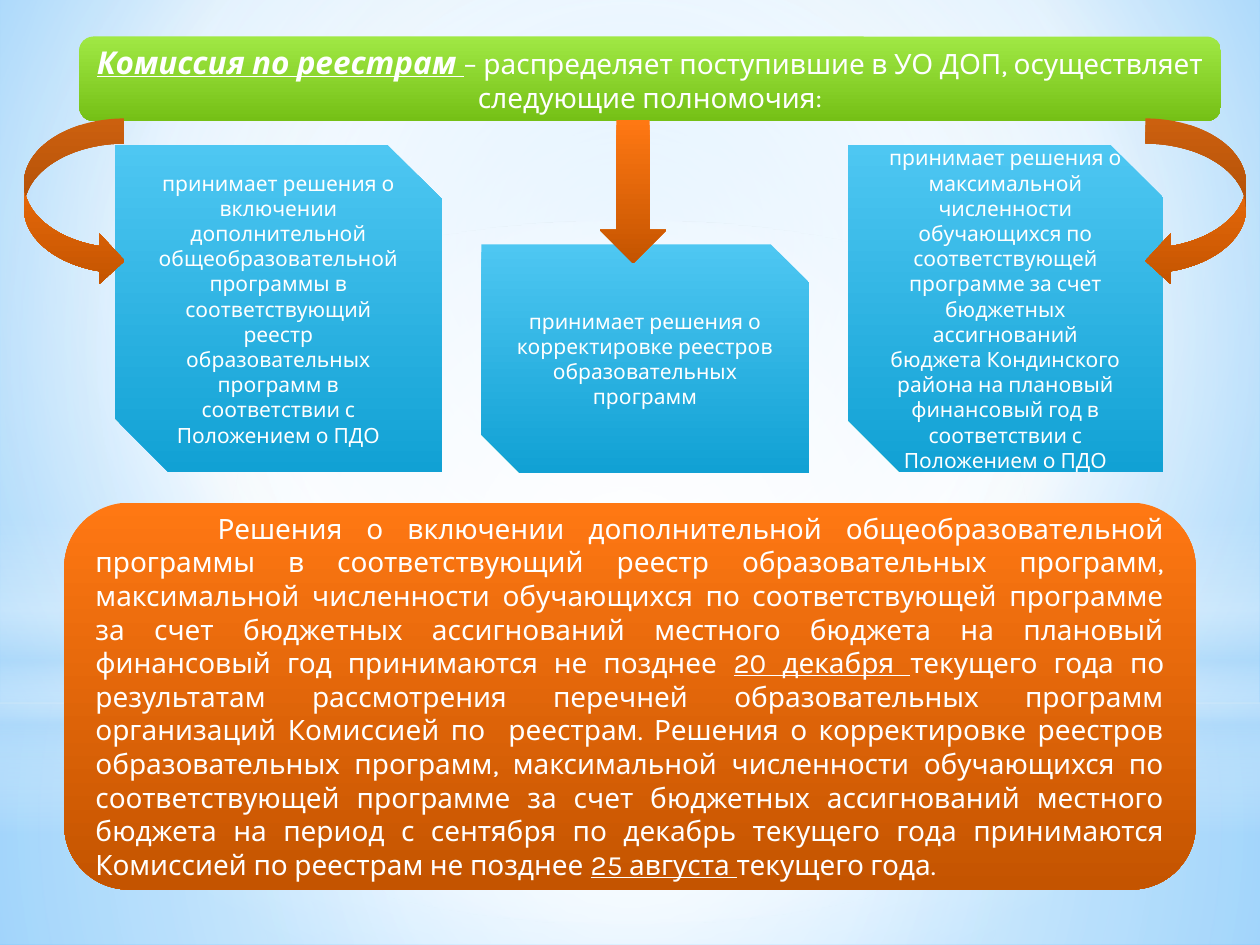
import pptx
import pptx.dml.color
import pptx.enum.shapes
import pptx.enum.text
import pptx.oxml.ns
import pptx.util
from lxml import etree

SHAPES = pptx.enum.shapes.MSO_SHAPE
ALIGN = pptx.enum.text.PP_ALIGN
qn = pptx.oxml.ns.qn

COLORS = {
    "white": "FFFFFF",
    "haze": "B4DCFA",
    "sky": "9ED5FF",
    "deep_sky": "5BB9FF",
    "green": "A0E844",
    "dark_green": "75C016",
    "blue": "4EC7F2",
    "dark_blue": "11A1D4",
    "orange": "FF7813",
    "dark_orange": "C45400",
}

# Gradient stops: position in percent, colour, opacity in percent
GREEN = [(0, "green", 100), (100, "dark_green", 100)]
BLUE = [(0, "blue", 100), (100, "dark_blue", 100)]
ORANGE = [(0, "orange", 100), (100, "dark_orange", 100)]
CENTER = (50, 50, 50, 50)


def gradient(stops, focus=None):
    """Vertical gradient, or a circular one around the focus rectangle."""
    fill = etree.Element(qn("a:gradFill"), rotWithShape="1")
    stop_list = etree.SubElement(fill, qn("a:gsLst"))
    for position, color, opacity in stops:
        stop = etree.SubElement(stop_list, qn("a:gs"), pos=str(position * 1000))
        value = etree.SubElement(stop, qn("a:srgbClr"), val=COLORS[color])
        if opacity < 100:
            etree.SubElement(value, qn("a:alpha"), val=str(opacity * 1000))
    if focus:
        circle = etree.SubElement(fill, qn("a:path"), {"path": "circle"})
        sides = {side: str(share * 1000) for side, share in zip("ltrb", focus)}
        etree.SubElement(circle, qn("a:fillToRect"), sides)
    else:
        etree.SubElement(fill, qn("a:lin"), ang="5400000", scaled="0")
    return fill


class SlideBuilder:
    """Style and current slide; lengths are cells of a 100 by 75 grid."""

    FONT = "Karla"
    COLUMNS = 100

    def __init__(self, presentation):
        self.cell = presentation.slide_width / self.COLUMNS
        self.slide = presentation.slides.add_slide(presentation.slide_layouts[6])

    def length(self, cells):
        return pptx.util.Emu(round(cells * self.cell))

    def paint(self, fill, properties, stops, focus=None):
        fill.solid()
        solid = properties.find(qn("a:solidFill"))
        properties.replace(solid, gradient(stops, focus))

    def background(self, stops, focus):
        fill = self.slide.background.fill
        fill.solid()
        properties = self.slide.element.find(".//" + qn("p:bgPr"))
        self.paint(fill, properties, stops, focus)

    def shape(self, kind, box, stops, focus=None):
        shape = self.slide.shapes.add_shape(kind, *map(self.length, box))
        shape.shadow.inherit = False
        shape.line.fill.background()
        self.paint(shape.fill, shape.element.spPr, stops, focus)
        return shape

    def panel(self, kind, box, stops, runs, align=ALIGN.CENTER, indent=0):
        """Filled shape with text; each run is text, size and font flags."""
        frame = self.shape(kind, box, stops).text_frame
        frame.word_wrap = True
        frame.vertical_anchor = pptx.enum.text.MSO_ANCHOR.MIDDLE
        paragraph = frame.paragraphs[0]
        paragraph.alignment = align
        if indent:
            properties = paragraph._p.get_or_add_pPr()
            properties.set("indent", str(self.length(indent)))
        for text, size, flags in runs:
            run = paragraph.add_run()
            run.text = text
            font = run.font
            font.name = self.FONT
            font.size = pptx.util.Pt(size)
            font.color.rgb = pptx.dml.color.RGBColor.from_string(COLORS["white"])
            font.bold = "b" in flags
            font.italic = "i" in flags
            font.underline = "u" in flags


def main():
    presentation = pptx.Presentation()
    presentation.slide_width = pptx.util.Inches(10)
    presentation.slide_height = pptx.util.Inches(7.5)
    builder = SlideBuilder(presentation)

    # Sky background with layers of haze
    builder.background(
        [(0, "sky", 100), (60, "white", 100), (100, "deep_sky", 100)],
        (20, 10, 20, 60))
    horizon = 55.8
    builder.shape(SHAPES.RECTANGLE, (0, horizon, 100, 75 - horizon),
                  [(0, "white", 91), (37, "white", 76), (100, "haze", 79)], CENTER)
    builder.shape(SHAPES.RECTANGLE, (0, 0, 100, horizon),
                  [(0, "white", 89), (48, "white", 62), (100, "haze", 79)], CENTER)
    builder.shape(SHAPES.RECTANGLE, (0, 41.2, 100, 25),
                  [(0, "white", 0), (29, "white", 30), (45, "haze", 40),
                   (55, "white", 26), (65, "haze", 60), (100, "white", 0)])
    builder.shape(SHAPES.OVAL, (0, 17.5, 100, 55.8),
                  [(0, "white", 100), (56, "white", 0)], CENTER)

    # Heading
    builder.panel(
        SHAPES.ROUNDED_RECTANGLE, (6.3, 2.9, 90.6, 6.7), GREEN,
        [("Комиссия по реестрам ", 18, "biu"),
         ("– распределяет поступившие в УО ДОП, осуществляет следующие "
          "полномочия:", 16, "")])

    # Three powers of the commission, standing on one line with equal gaps
    cards = [
        (26, 26, "принимает решения о включении дополнительной "
                 "общеобразовательной программы в соответствующий реестр "
                 "образовательных программ в соответствии с Положением о ПДО"),
        (26, 18.1, "принимает решения о корректировке реестров "
                   "образовательных программ"),
        (25, 26, "принимает решения о максимальной численности обучающихся по "
                 "соответствующей программе за счет бюджетных ассигнований "
                 "бюджета Кондинского района на плановый финансовый год в "
                 "соответствии с Положением о ПДО"),
    ]
    left, bottom, gap = 9.1, 37.5, 3.1
    for width, height, text in cards:
        builder.panel(SHAPES.SNIP_2_DIAG_RECTANGLE,
                      (left, bottom - height, width, height), BLUE,
                      [(text, 12, "")])
        left += width + gap

    # Deadlines
    builder.panel(
        SHAPES.ROUNDED_RECTANGLE, (5.1, 39.9, 89.8, 30.7), ORANGE,
        [("Решения о включении дополнительной общеобразовательной программы в "
          "соответствующий реестр образовательных программ, максимальной "
          "численности обучающихся по соответствующей программе за счет "
          "бюджетных ассигнований местного бюджета на плановый финансовый год "
          "принимаются не позднее ", 16, ""),
         ("20 декабря ", 16, "u"),
         ("текущего года по результатам рассмотрения перечней образовательных "
          "программ организаций Комиссией по  реестрам. Решения о "
          "корректировке реестров образовательных программ, максимальной "
          "численности обучающихся по соответствующей программе за счет "
          "бюджетных ассигнований местного бюджета на период с сентября по "
          "декабрь текущего года принимаются Комиссией по реестрам не "
          "позднее ", 16, ""),
         ("25 августа ", 16, "u"),
         ("текущего года.", 16, "")],
        align=ALIGN.JUSTIFY, indent=9.7)

    # Arrows from the heading to the cards
    for kind, box in [
        (SHAPES.CURVED_LEFT_ARROW, (90.9, 9.4, 8, 13.3)),
        (SHAPES.CURVED_RIGHT_ARROW, (1.9, 9.4, 8, 13.3)),
        (SHAPES.DOWN_ARROW, (47.6, 9.5, 5.3, 11.4)),
    ]:
        builder.shape(kind, box, ORANGE)

    presentation.save("out.pptx")


if __name__ == "__main__":
    main()
